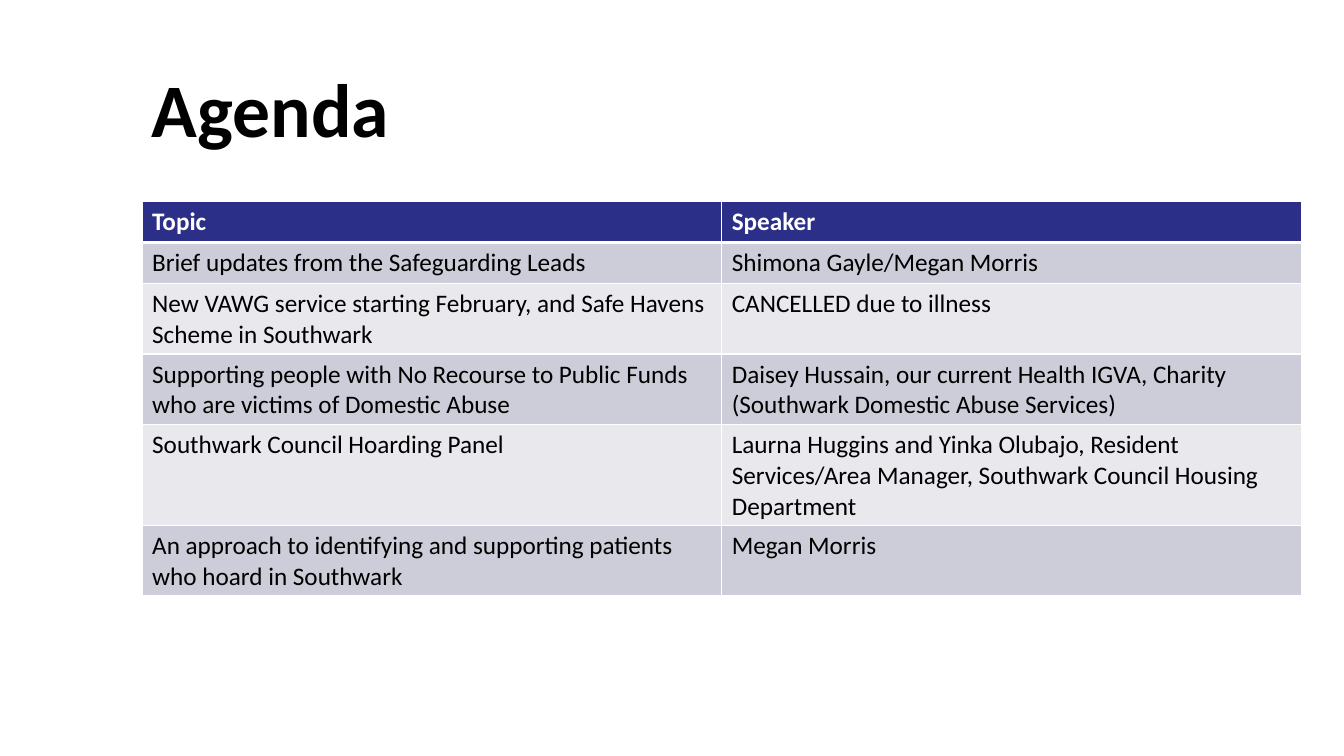
from dataclasses import dataclass
from typing import NamedTuple

from lxml import etree
from pptx import Presentation
from pptx.dml.color import RGBColor
from pptx.enum.text import MSO_ANCHOR
from pptx.oxml.ns import qn
from pptx.slide import Slide
from pptx.table import _Cell
from pptx.util import Pt

MIDDLE = MSO_ANCHOR.MIDDLE
BLANK_LAYOUT = 6


@dataclass(frozen=True)
class Theme:
    font: str = "Calibri"
    title_size: float = 54
    table_size: float = 18
    ink: str = "000000"
    paper: str = "FFFFFF"
    header: str = "2C2F88"
    bands: tuple[str, str] = ("CDCDDA", "E8E8ED")
    thin_rule: float = 1
    header_rule: float = 3


class AgendaItem(NamedTuple):
    topic: str
    speaker: str


THEME = Theme()
LEFT, WIDTH = 101.5, 828
TITLE_TOP, TITLE_HEIGHT = 28.8, 104.4
TABLE_TOP, ROW_HEIGHT = 144, 29.2

HEADINGS = AgendaItem("Topic", "Speaker")
AGENDA = [
    AgendaItem("Brief updates from the Safeguarding Leads", "Shimona Gayle/Megan Morris"),
    AgendaItem("New VAWG service starting February, and Safe Havens Scheme in Southwark",
               "CANCELLED due to illness"),
    AgendaItem("Supporting people with No Recourse to Public Funds who are victims of Domestic Abuse",
               "Daisey Hussain, our current Health IGVA, Charity (Southwark Domestic Abuse Services)"),
    AgendaItem("Southwark Council Hoarding Panel",
               "Laurna Huggins and Yinka Olubajo, Resident Services/Area Manager, "
               "Southwark Council Housing Department"),
    AgendaItem("An approach to identifying and supporting patients who hoard in Southwark",
               "Megan Morris"),
]


def style_font(para, size: float, color: str, bold: bool) -> None:
    font = para.font
    font.name, font.size, font.bold = THEME.font, Pt(size), bold
    font.color.rgb = RGBColor.from_string(color)


def add_title(page: Slide, text: str) -> None:
    box = page.shapes.add_textbox(Pt(LEFT), Pt(TITLE_TOP), Pt(WIDTH), Pt(TITLE_HEIGHT))
    frame = box.text_frame
    frame.word_wrap = True
    frame.vertical_anchor = MIDDLE
    para = frame.paragraphs[0]
    para.text = text
    para.line_spacing = 0.9
    style_font(para, THEME.title_size, THEME.ink, True)


def set_borders(cell: _Cell, top: float, bottom: float) -> None:
    """Rule all four sides; borders must come before the fill in the XML."""
    properties = cell._tc.get_or_add_tcPr()
    widths = {"a:lnL": THEME.thin_rule, "a:lnR": THEME.thin_rule,
              "a:lnT": top, "a:lnB": bottom}
    for position, (tag, width) in enumerate(widths.items()):
        line = etree.Element(qn(tag), w=str(Pt(width)))
        fill = etree.SubElement(line, qn("a:solidFill"))
        etree.SubElement(fill, qn("a:srgbClr"), val=THEME.paper)
        properties.insert(position, line)


def fill_cell(cell: _Cell, text: str, row: int) -> None:
    is_header = row == 0
    cell.text = text
    color = THEME.paper if is_header else THEME.ink
    style_font(cell.text_frame.paragraphs[0], THEME.table_size, color, is_header)
    cell.fill.solid()
    background = THEME.header if is_header else THEME.bands[(row - 1) % 2]
    cell.fill.fore_color.rgb = RGBColor.from_string(background)
    set_borders(cell,
                top=THEME.header_rule if row == 1 else THEME.thin_rule,
                bottom=THEME.header_rule if is_header else THEME.thin_rule)


def add_agenda(page: Slide, items: list[AgendaItem]) -> None:
    rows = [HEADINGS, *items]
    table = page.shapes.add_table(len(rows), len(HEADINGS), Pt(LEFT), Pt(TABLE_TOP),
                                  Pt(WIDTH), Pt(ROW_HEIGHT * len(rows))).table
    for row, item in enumerate(rows):
        for column, text in enumerate(item):
            fill_cell(table.cell(row, column), text, row)


def main() -> None:
    deck = Presentation()
    deck.slide_width, deck.slide_height = Pt(960), Pt(540)
    page = deck.slides.add_slide(deck.slide_layouts[BLANK_LAYOUT])
    add_title(page, "Agenda")
    add_agenda(page, AGENDA)
    deck.save("out.pptx")


if __name__ == "__main__":
    main()
